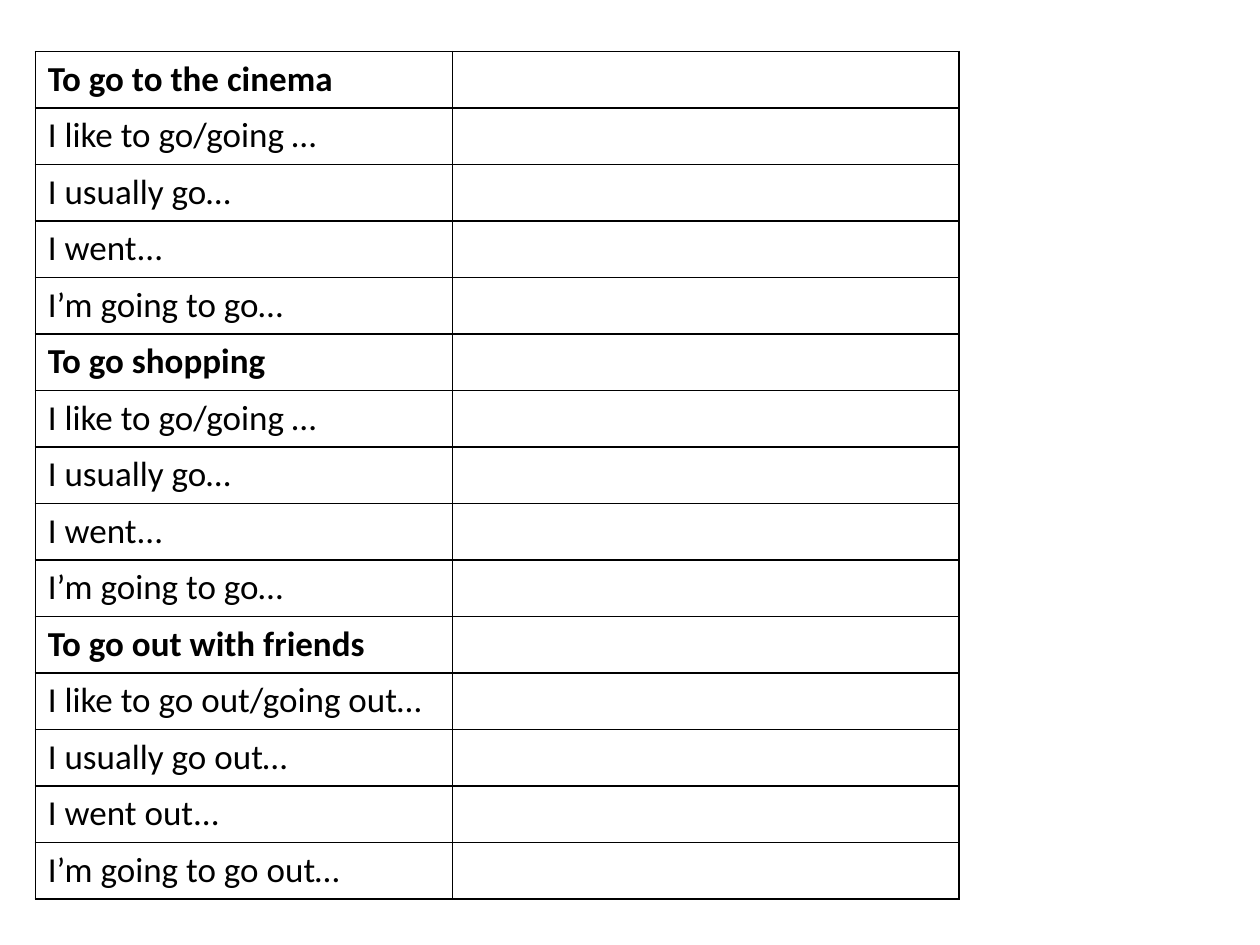
from dataclasses import dataclass

from lxml.etree import SubElement
from pptx import Presentation
from pptx.dml.color import RGBColor
from pptx.enum.text import MSO_ANCHOR
from pptx.oxml.ns import qn
from pptx.util import Inches, Pt


@dataclass(frozen=True)
class Theme:
    font: str = "Calibri"
    text_size: int = 20
    ink: str = "000000"
    paper: str = "FFFFFF"
    border_width: float = 1


class Worksheet:
    """Holds the theme and the current slide."""

    def __init__(self, slide, theme):
        self.slide = slide
        self.theme = theme

    def border(self, cell):
        properties = cell._tc.get_or_add_tcPr()
        # Borders must come before the fill in the cell properties
        for index, side in enumerate(("a:lnL", "a:lnR", "a:lnT", "a:lnB")):
            line = SubElement(properties, qn(side), w=str(Pt(self.theme.border_width)))
            fill = SubElement(line, qn("a:solidFill"))
            SubElement(fill, qn("a:srgbClr"), val=self.theme.ink)
            properties.insert(index, line)

    def cell(self, cell, text, bold):
        cell.fill.solid()
        cell.fill.fore_color.rgb = RGBColor.from_string(self.theme.paper)
        cell.vertical_anchor = MSO_ANCHOR.TOP
        cell.text = text
        font = cell.text_frame.paragraphs[0].font
        font.name = self.theme.font
        font.size = Pt(self.theme.text_size)
        font.bold = bold
        font.color.rgb = RGBColor.from_string(self.theme.ink)
        self.border(cell)

    def prompt_table(self, rows, left, top, column_widths, height):
        """Prompts on the left, room for answers on the right."""
        frame = self.slide.shapes.add_table(
            len(rows), len(column_widths), Inches(left), Inches(top),
            Inches(sum(column_widths)), Inches(height))
        table = frame.table
        table.first_row = table.horz_banding = False
        for column, width in zip(table.columns, column_widths):
            column.width = Inches(width)
        for row, (prompt, bold) in zip(table.rows, rows):
            prompt_cell, answer_cell = row.cells
            self.cell(prompt_cell, prompt, bold)
            self.cell(answer_cell, "", bold)


def activity_rows(heading, like, out=""):
    """One heading followed by its four sentence starters."""
    starters = (like, f"I usually go{out}…", f"I went{out}...", f"I’m going to go{out}…")
    return [(heading, True)] + [(starter, False) for starter in starters]


def main():
    presentation = Presentation()
    presentation.slide_width = Inches(10)
    presentation.slide_height = Inches(7.5)
    slide = presentation.slides.add_slide(presentation.slide_layouts[6])

    # Three activities, five rows each
    rows = (activity_rows("To go to the cinema", "I like to go/going …")
            + activity_rows("To go shopping", "I like to go/going …")
            + activity_rows("To go out with friends", "I like to go out/going out…", " out"))
    Worksheet(slide, Theme()).prompt_table(
        rows, left=0.28, top=0.41, column_widths=(3.31, 4.02), height=6.73)

    presentation.save("out.pptx")


if __name__ == "__main__":
    main()
